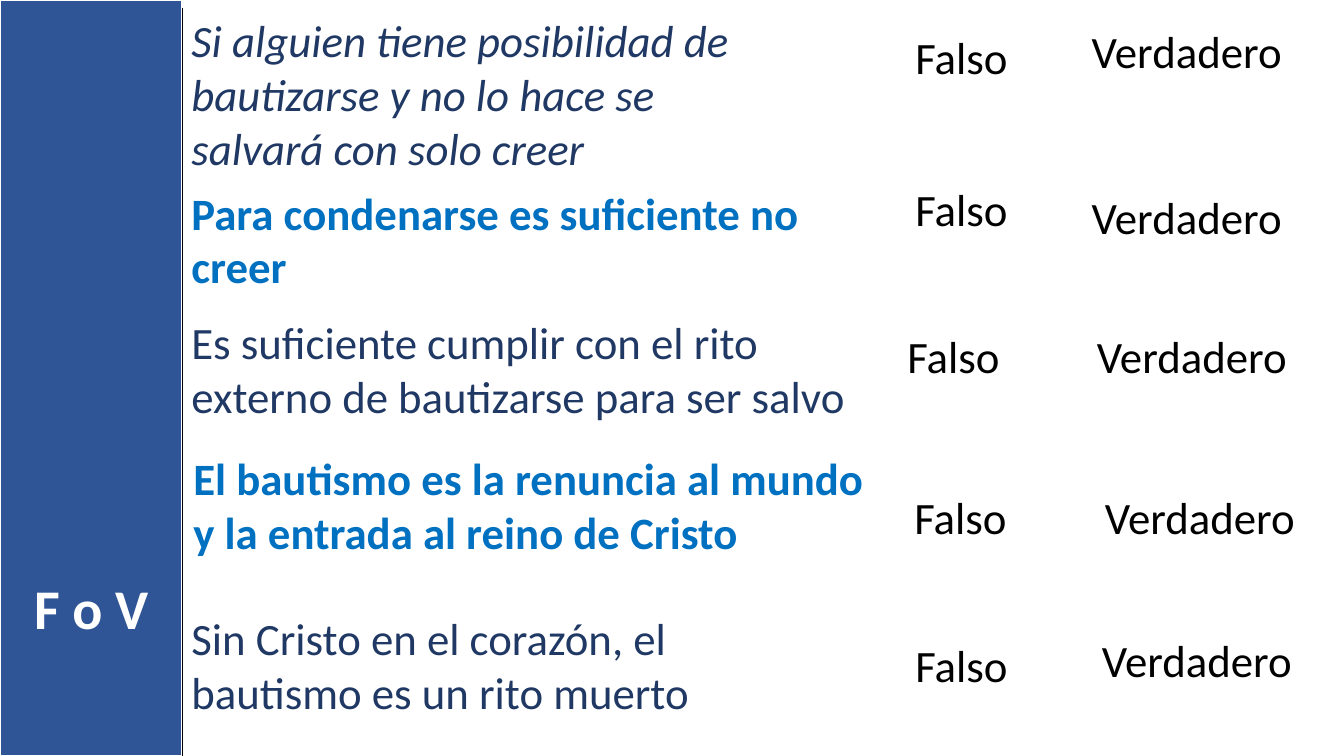
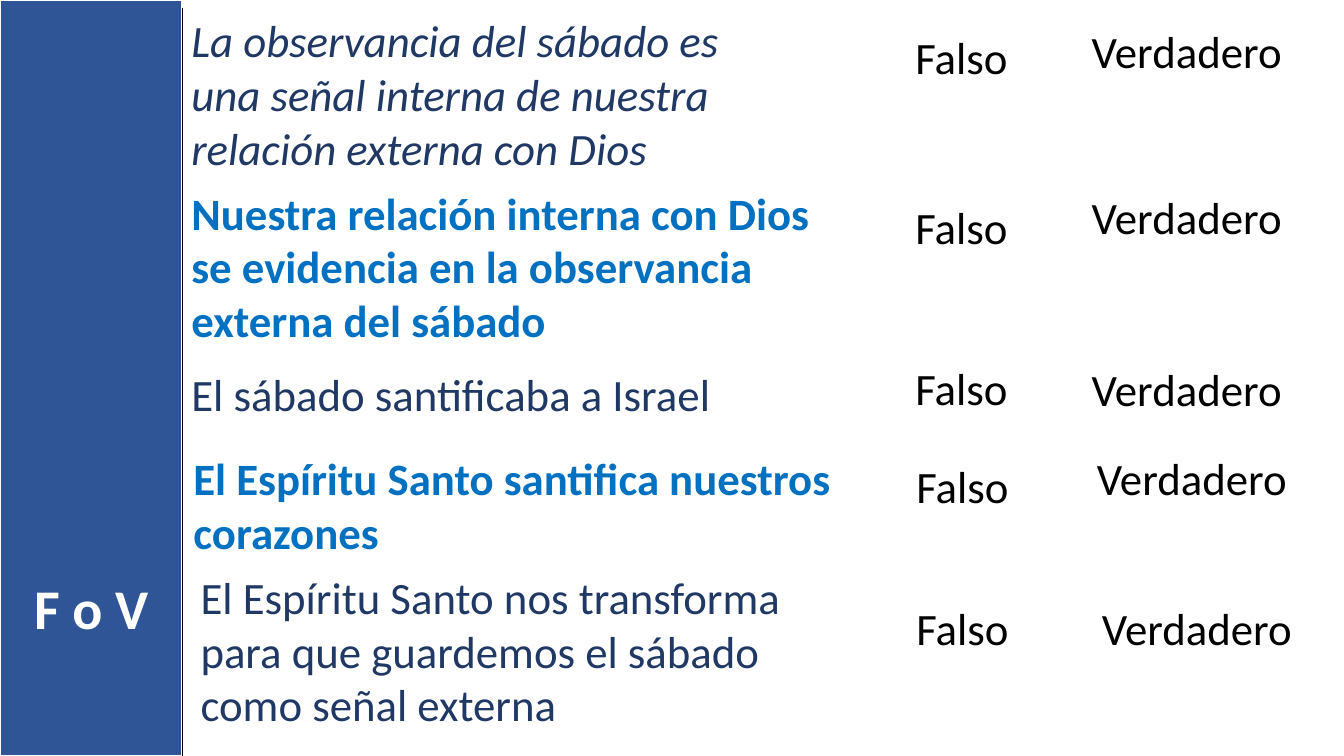
"""Build two true-or-false quiz slides with a shared side band."""
from dataclasses import dataclass

from lxml.etree import SubElement as Sub
from pptx import Presentation
from pptx.dml.color import RGBColor as Rgb
from pptx.enum.shapes import MSO_CONNECTOR as Link, MSO_SHAPE as Form
from pptx.enum.text import MSO_ANCHOR as Anchor, MSO_AUTO_SIZE as Fit, PP_ALIGN as Align
from pptx.oxml.ns import qn
from pptx.util import Inches as In, Pt


@dataclass(frozen=True)
class Theme:
    face: str = "Calibri"
    band: str = "2F5597"
    white: str = "FFFFFF"
    black: str = "000000"
    navy: str = "203864"
    sky: str = "0070C0"
    body: int = 32
    head: int = 40


T = Theme()
WIDE, HIGH = 13.33, 7.5
SIDE = 1.81
LINE, PAD = 0.54, 0.1

PLAIN = {"color": T.navy}
BOLD = {"color": T.sky, "bold": True}
SLOPE = {"color": T.navy, "italic": True}
ROWS = [(SLOPE, 6.14), (BOLD, 6.52), (PLAIN, 6.7), (BOLD, 6.97), (PLAIN, 6.52)]

QUIZ = [
    [
        ("Si alguien tiene posibilidad de bautizarse y no lo hace se salvará con solo creer",
         3, (1.8, 0.08), (8.98, 0.25), (10.73, 0.19)),
        ("Para condenarse es suficiente no creer",
         2, (1.8, 1.79), (8.98, 1.75), (10.73, 1.83)),
        ("Es suficiente cumplir con el rito externo de bautizarse para ser salvo",
         2, (1.8, 3.07), (8.9, 3.21), (10.78, 3.21)),
        ("El bautismo es la renuncia al mundo y la entrada al reino de Cristo",
         2, (1.82, 4.42), (8.97, 4.81), (10.86, 4.81)),
        ("Sin Cristo en el corazón, el bautismo es un rito muerto",
         2, (1.8, 6.01), (8.98, 6.28), (10.83, 6.23)),
    ],
    [
        ("La observancia del sábado es una señal interna de nuestra relación externa con Dios",
         3, (1.8, 0.08), (8.98, 0.25), (10.73, 0.19)),
        ("Nuestra relación interna con Dios se evidencia en la observancia externa del sábado",
         3, (1.8, 1.79), (8.98, 1.93), (10.73, 1.83)),
        ("El sábado santificaba a Israel",
         1, (1.8, 3.59), (8.98, 3.53), (10.73, 3.54)),
        ("El Espíritu Santo santifica nuestros corazones",
         2, (1.82, 4.42), (8.99, 4.5), (10.78, 4.42)),
        ("El Espíritu Santo nos transforma para que guardemos el sábado como señal externa",
         3, (1.89, 5.6), (8.99, 5.91), (10.83, 5.91)),
    ],
]


def write(shape, text, color, size=T.body, **style):
    frame = shape.text_frame
    frame.text = text
    look = {"word_wrap": True, "auto_size": Fit.NONE, "vertical_anchor": Anchor.TOP}
    for key, val in look.items():
        setattr(frame, key, val)
    font = frame.paragraphs[0].runs[0].font
    for key, val in {"name": T.face, "size": Pt(size), **style}.items():
        setattr(font, key, val)
    font.color.rgb = Rgb.from_string(color)


def label(slide, text, spot, wide, lines=1, **style):
    size = wide, PAD + LINE * lines
    box = slide.shapes.add_textbox(*map(In, spot + size))
    write(box, text, **style)


deck = Presentation()
deck.slide_width, deck.slide_height = In(WIDE), In(HIGH)
base = deck.slide_layouts[5]
place = {"left": 0, "top": In(5.64), "width": In(SIDE), "height": In(0.77)}
for key, val in place.items():
    setattr(base.placeholders[0], key, val)

for page, quiz in enumerate(QUIZ):
    slide = deck.slides.add_slide(base)
    if page == 0:
        band = slide.shapes.add_shape(Form.RECTANGLE, 0, 0, In(SIDE), In(HIGH))
        band.shadow.inherit = False
        band.fill.solid()
        band.fill.fore_color.rgb = Rgb.from_string(T.band)
        rule = slide.shapes.add_connector(
            Link.STRAIGHT, In(SIDE), In(0.08), In(SIDE), In(HIGH))
        Sub(rule._element.spPr, qn("a:effectLst"))
        for part, color, thick in [(band, T.white, 1.5), (rule, T.black, 1)]:
            part.line.color.rgb = Rgb.from_string(color)
            part.line.width = Pt(thick)
            base.shapes._spTree.append(part._element)

    title = slide.shapes.title
    write(title, "F o V", T.white, T.head, bold=True)
    title.text_frame.paragraphs[0].alignment = Align.CENTER

    for (style, wide), (text, lines, spot, false, true) in zip(ROWS, quiz):
        label(slide, text, spot, wide, lines, **style)
        label(slide, "Falso", false, 1.75, color=T.black)
        label(slide, "Verdadero", true, 2.27, color=T.black)

deck.save("out.pptx")
